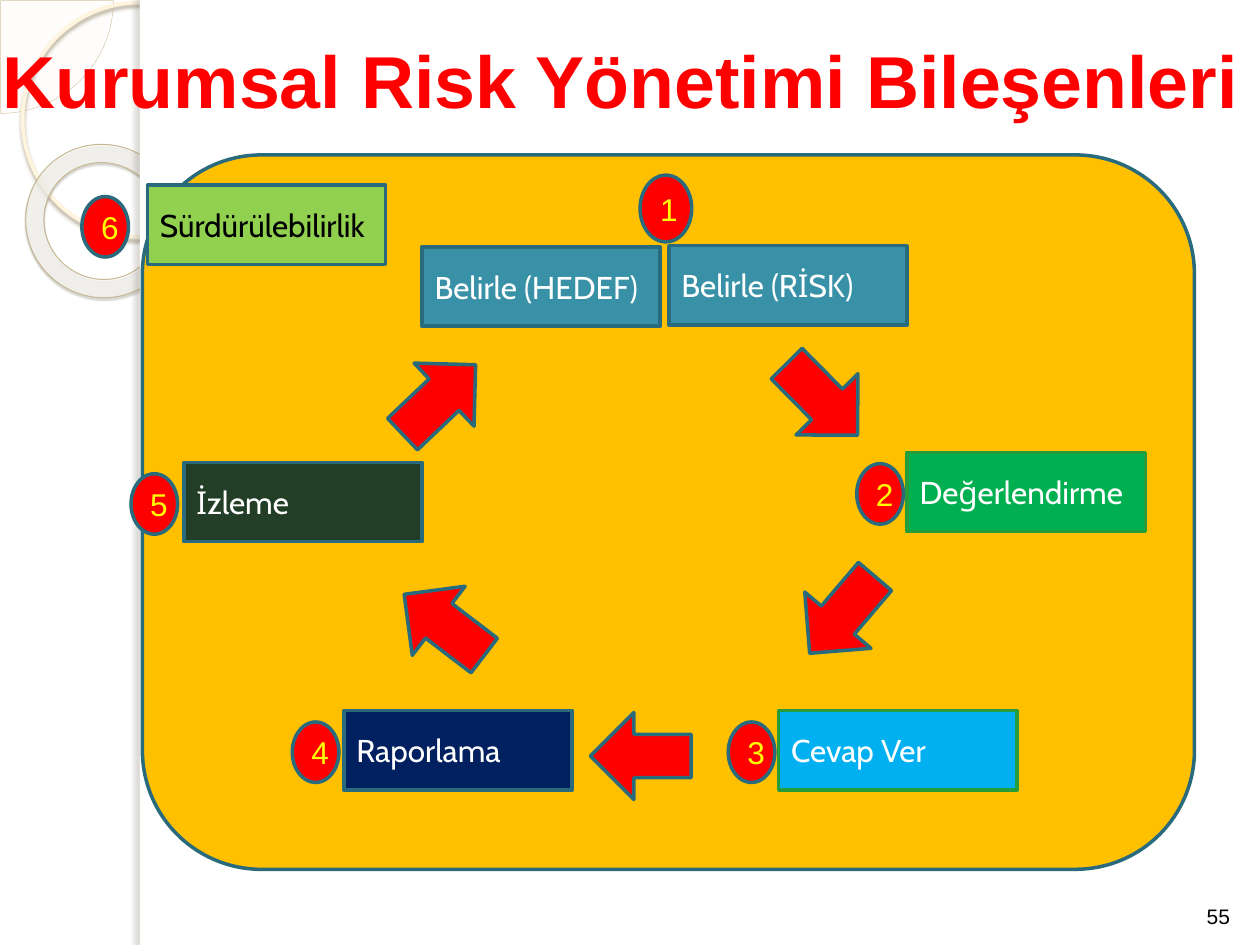
from lxml import etree
from pptx import Presentation
from pptx.dml.color import RGBColor
from pptx.enum.shapes import MSO_SHAPE
from pptx.enum.text import MSO_ANCHOR, PP_ALIGN
from pptx.oxml import parse_xml
from pptx.oxml.ns import nsdecls, qn
from pptx.util import Inches, Pt

RECT, ROUNDED, OVAL = MSO_SHAPE.RECTANGLE, MSO_SHAPE.ROUNDED_RECTANGLE, MSO_SHAPE.OVAL
PIE, DONUT, DOWN_ARROW = MSO_SHAPE.PIE, MSO_SHAPE.DONUT, MSO_SHAPE.DOWN_ARROW
LEFT, CENTER = PP_ALIGN.LEFT, PP_ALIGN.CENTER
MIDDLE, BOTTOM = MSO_ANCHOR.MIDDLE, MSO_ANCHOR.BOTTOM

TEAL, GREEN_EDGE, RED, YELLOW = "296B7C", "269C3A", "FF0000", "FFFF00"
WHITE, BLACK = "FFFFFF", "000000"
COLUMNS, ROWS = 100, 75


def rgb(value):
    return RGBColor.from_string(value)


class CycleSlide:
    """Slide style; places are (column, row, columns wide, rows high)."""
    heading_font, box_font, size = "Arial", "Cabin", 18

    def __init__(self, deck):
        self.slide = deck.slides.add_slide(deck.slide_layouts[6])
        self.column = deck.slide_width / COLUMNS
        self.row = deck.slide_height / ROWS

    def place(self, at):
        x, y, w, h = at
        return (round(x * self.column), round(y * self.row),
                round(w * self.column), round(h * self.row))

    def shape(self, kind, at, fill=None, edge=None, weight=2, turn=0, adjust=()):
        shape = self.slide.shapes.add_shape(kind, *self.place(at))
        shape.shadow.inherit = False
        shape.rotation = turn
        for index, value in enumerate(adjust):
            shape.adjustments[index] = value
        if fill:
            shape.fill.solid()
            shape.fill.fore_color.rgb = rgb(fill)
        else:
            shape.fill.background()
        if edge:
            shape.line.color.rgb = rgb(edge)
            shape.line.width = Pt(weight)
        else:
            shape.line.fill.background()
        return shape

    def set_text(self, shape, text, color, font, size, align=LEFT, anchor=MIDDLE, bold=False):
        frame = shape.text_frame
        frame.word_wrap = True
        frame.vertical_anchor = anchor
        paragraph = frame.paragraphs[0]
        paragraph.text = text
        paragraph.alignment = align
        paragraph.font.name, paragraph.font.size = font, Pt(size)
        paragraph.font.bold = bold
        paragraph.font.color.rgb = rgb(color)

    def label(self, at, text, color, size, **style):
        box = self.slide.shapes.add_textbox(*self.place(at))
        self.set_text(box, text, color, self.heading_font, size, **style)

    def box(self, at, text, fill, edge=TEAL, color=WHITE):
        self.set_text(self.shape(RECT, at, fill, edge), text, color, self.box_font, self.size)

    def badge(self, at, number):
        oval = self.shape(OVAL, at, RED, TEAL)
        self.set_text(oval, str(number), YELLOW, self.heading_font, self.size, align=CENTER)

    def arrow(self, x, y, turn):
        self.shape(DOWN_ARROW, (x, y, 6.9, 8), RED, TEAL, turn=turn)

    def fade(self, shape, percent):
        color = shape.element.spPr.find(qn("a:solidFill"))[0]
        etree.SubElement(color, qn("a:alpha"), val=str(percent * 1000))

    def gradient(self, shape, stops, focus):
        marks = "".join(
            f'<a:gs pos="{at * 1000}"><a:srgbClr val="{color}">'
            f'<a:alpha val="{alpha * 1000}"/></a:srgbClr></a:gs>' for at, color, alpha in stops)
        sides = " ".join(f'{side}="{share * 1000}"' for side, share in zip("ltrb", focus))
        properties = shape.element.spPr
        properties.replace(properties.find(qn("a:noFill")), parse_xml(
            f'<a:gradFill {nsdecls("a")}><a:gsLst>{marks}</a:gsLst>'
            f'<a:path path="circle"><a:fillToRect {sides}/></a:path></a:gradFill>'))

    def cast_shadow(self, shape, color, alpha, blur, distance, angle):
        effects = shape.element.spPr.find(qn("a:effectLst"))
        effects.append(parse_xml(
            f'<a:outerShdw {nsdecls("a")} blurRad="{Pt(blur)}" dist="{Pt(distance)}" '
            f'dir="{angle * 60000}" algn="tl" rotWithShape="0"><a:srgbClr val="{color}">'
            f'<a:alpha val="{alpha * 1000}"/></a:srgbClr></a:outerShdw>'))


def draw_backdrop(page):
    # Circles in the left margin
    corner = page.shape(PIE, (-8.9, -8.9, 17.9, 17.9), "FEFAF4", "D3C39F", 0.25, adjust=(0, 54))
    page.fade(corner, 33)
    ring = page.shape(OVAL, (1.8, 0.2, 18.6, 18.6), edge="FFF5DE", weight=2.15)
    page.cast_shadow(ring, "B0A68F", 85, 2, 2, 90)
    donut = page.shape(DONUT, (2, 11.5, 12.3, 12.1), edge="C7B893", weight=0.58,
                       turn=38.6, adjust=(0.12,))
    page.gradient(donut, [(0, "FFFCF6", 70), (70, "FFFEFB", 55), (100, "F0D28E", 60)],
                  (-408, -50, 508, 150))
    page.cast_shadow(donut, "5A5444", 35, 1, 1.2, 75)
    # White page with its shaded edge
    page.shape(RECT, (11.1, 0, 88.9, ROWS), WHITE)
    page.cast_shadow(page.shape(RECT, (11.1, 0, 0.8, ROWS), WHITE), "736F63", 25, 3, 3, 180)


def draw_cycle(page):
    page.shape(ROUNDED, (11.3, 12.3, 83.5, 56.7), "FFC000", TEAL)
    # Step 1 has two boxes below one larger badge
    page.box((33.5, 19.6, 18.9, 6.3), "Belirle (HEDEF)", "3891A7")
    page.box((53.1, 19.5, 18.9, 6.3), "Belirle (RİSK)", "3891A7")
    page.badge((50.8, 13.9, 4.1, 5.3), 1)
    # Steps 2 to 6: left, top, width, badge offset, text, fill, edge, text colour
    steps = [
        (72, 35.9, 18.9, 4, "Değerlendirme", "00B050", GREEN_EDGE, WHITE),
        (61.8, 56.4, 18.9, 4, "Cevap Ver", "00B0F0", GREEN_EDGE, WHITE),
        (27.3, 56.4, 18.1, 4.1, "Raporlama", "002060", TEAL, WHITE),
        (14.6, 36.7, 18.9, 4.2, "İzleme", "223E27", TEAL, WHITE),
        (11.7, 14.7, 18.9, 5.2, "Sürdürülebilirlik", "92D050", TEAL, BLACK),
    ]
    for number, (x, y, width, offset, text, fill, edge, color) in enumerate(steps, 2):
        page.box((x, y, width, 6.3), text, fill, edge, color)
        page.badge((x - offset, y + 0.9, 3.7, 4.8), number)
    # Arrows, clockwise
    for x, y, turn in [(61.8, 27.7, 315.3), (63.4, 44.8, 40.4), (47.4, 56, 90),
                       (31.8, 45.6, 127.4), (31.4, 27.7, 226.5)]:
        page.arrow(x, y, turn)


def main():
    deck = Presentation()
    deck.slide_width, deck.slide_height = Inches(10), Inches(7.5)
    page = CycleSlide(deck)
    draw_backdrop(page)
    draw_cycle(page)
    # Title and page number
    page.label((-0.8, 0, 100.8, 12.5), "Kurumsal Risk Yönetimi Bileşenleri", RED, 42, bold=True)
    page.label((94.2, 69, 5, 5.2), "55", BLACK, 12, align=CENTER, anchor=BOTTOM)
    deck.save("out.pptx")


if __name__ == "__main__":
    main()
